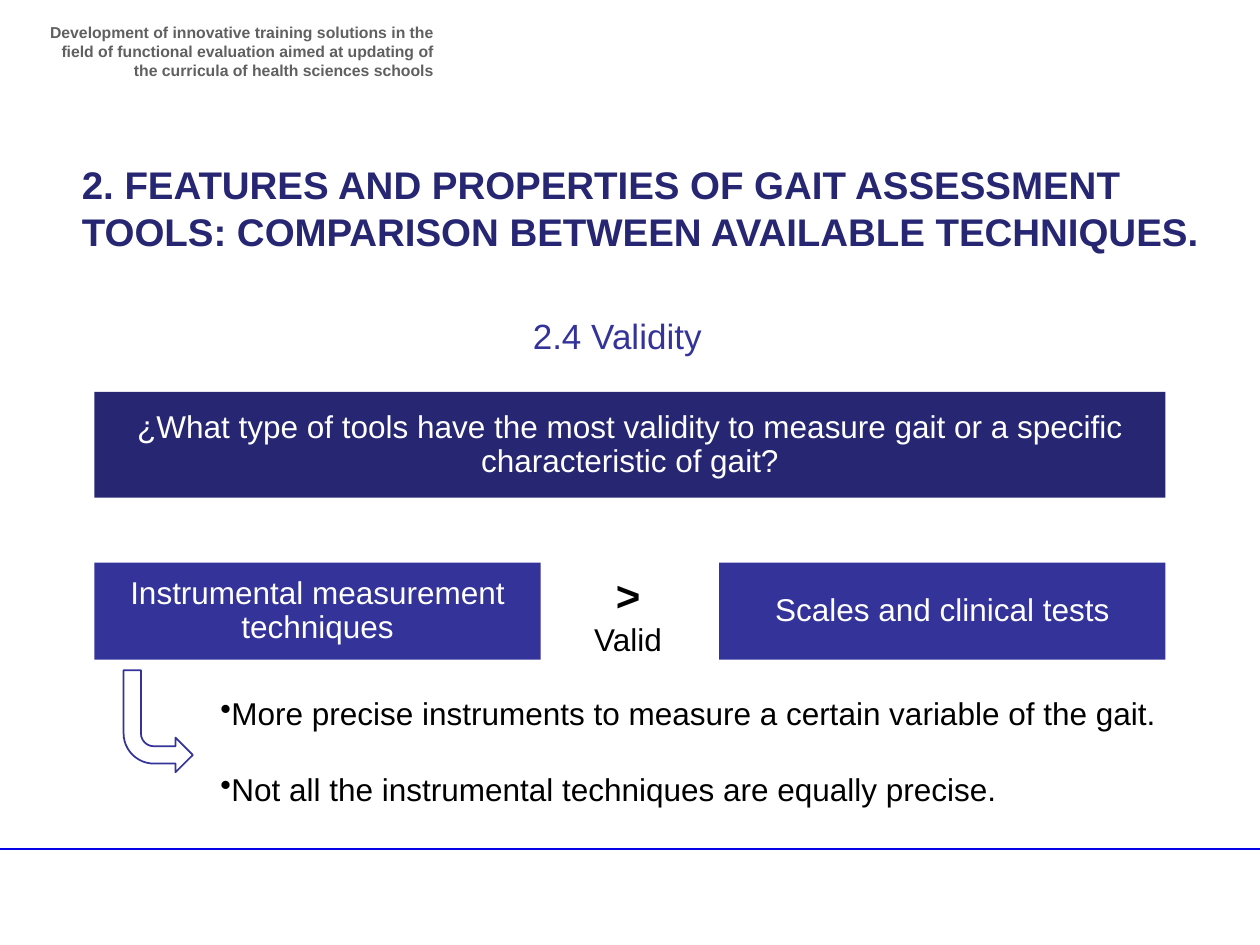
import pptx
import pptx.util
import pptx.dml.color
import pptx.oxml.ns
import pptx.enum.shapes
import pptx.enum.text
from lxml import etree

Pt = pptx.util.Pt
ALIGN = pptx.enum.text.PP_ALIGN
ANCHOR = pptx.enum.text.MSO_ANCHOR
SHAPE = pptx.enum.shapes.MSO_SHAPE

# Content
PROJECT = ("Development of innovative training solutions in the field of functional "
           "evaluation aimed at updating of the curricula of health sciences schools")
TITLE = ("2. FEATURES AND PROPERTIES OF GAIT ASSESSMENT TOOLS: "
         "COMPARISON BETWEEN AVAILABLE TECHNIQUES.")
SECTION = "2.4 Validity"
QUESTION = ("¿What type of tools have the most validity to measure gait "
            "or a specific characteristic of gait?")
COMPARED = ["Instrumental measurement techniques", "Scales and clinical tests"]
RELATION = [">", "Valid"]
REASONS = ["More precise instruments to measure a certain variable of the gait.",
           "Not all the instrumental techniques are equally precise."]

# Look and layout, in points
FONT = "Arial"
NAVY, INDIGO, GREY, BLACK, WHITE, RULE = (
    "262673", "333399", "606060", "000000", "FFFFFF", "0404E6")
SLIDE_W, SLIDE_H = 720, 540
MARGIN = 54
CONTENT_W = SLIDE_W - 2 * MARGIN
TOOL_W, TOOL_H, TOOL_TOP = 255, 55.5, 321.5
BULLET_INDENT = 6.3


def rgb(color):
    return pptx.dml.color.RGBColor.from_string(color)


def place(shape, left, top, width, height):
    shape.left, shape.top, shape.width, shape.height = map(Pt, (left, top, width, height))


def style(paragraph, size, color, bold=False, align=ALIGN.LEFT):
    paragraph.alignment = align
    for run in paragraph.runs:
        run.font.name, run.font.size, run.font.bold = FONT, Pt(size), bold
        run.font.color.rgb = rgb(color)


def add_text(slide, box, lines, size, color, bold=False, align=ALIGN.LEFT):
    frame = slide.shapes.add_textbox(*map(Pt, box)).text_frame
    frame.word_wrap = True
    frame.text = "\n".join(lines)
    for paragraph in frame.paragraphs:
        style(paragraph, size, color, bold, align)
    return frame


def add_panel(slide, box, text, fill):
    panel = slide.shapes.add_shape(SHAPE.RECTANGLE, *map(Pt, box))
    panel.shadow.inherit = False
    panel.fill.solid()
    panel.fill.fore_color.rgb = rgb(fill)
    panel.line.fill.background()
    frame = panel.text_frame
    frame.word_wrap = True
    frame.vertical_anchor = ANCHOR.MIDDLE
    frame.margin_left = frame.margin_right = Pt(0.9)
    frame.margin_top = frame.margin_bottom = Pt(0.9)
    frame.text = text
    frame.paragraphs[0].line_spacing = 0.9
    style(frame.paragraphs[0], 18, WHITE, align=ALIGN.CENTER)


def add_bullet(paragraph):
    properties = paragraph._p.get_or_add_pPr()
    properties.set("marL", str(Pt(BULLET_INDENT)))
    properties.set("indent", str(-Pt(BULLET_INDENT)))
    bullet = etree.SubElement(properties, pptx.oxml.ns.qn("a:buChar"))
    bullet.set("char", "•")


deck = pptx.Presentation()
deck.slide_width, deck.slide_height = Pt(SLIDE_W), Pt(SLIDE_H)
slide = deck.slides.add_slide(deck.slide_layouts[5])

# Footer rule and project header
rule = slide.shapes.add_connector(pptx.enum.shapes.MSO_CONNECTOR.STRAIGHT,
                                  Pt(0), Pt(485.3), Pt(SLIDE_W), Pt(485.3))
rule.line.color.rgb = rgb(RULE)
rule.line.width = Pt(1)
etree.SubElement(rule._element.spPr, pptx.oxml.ns.qn("a:effectLst"))
add_text(slide, (20, 9.4, 234.7, 34), [PROJECT], 9, GREY, True, ALIGN.RIGHT)

# Title and section heading
title = slide.shapes.title
place(title, 39.6, 88.6, 654.5, 60.5)
title.text_frame.text = TITLE
title.text_frame.word_wrap = True
title.text_frame.auto_size = pptx.enum.text.MSO_AUTO_SIZE.NONE
title.text_frame.vertical_anchor = ANCHOR.TOP
style(title.text_frame.paragraphs[0], 22, NAVY, True)
add_text(slide, (297.4, 176.4, 113, 55.4), [SECTION], 20, INDIGO)

# Question, and the two kinds of tool at either margin
add_panel(slide, (MARGIN, 224, CONTENT_W, 60.5), QUESTION, NAVY)
for i, tool in enumerate(COMPARED):
    left = MARGIN + i * (CONTENT_W - TOOL_W)
    add_panel(slide, (left, TOOL_TOP, TOOL_W, TOOL_H), tool, INDIGO)

# Relation between them
relation = add_text(slide, (324.7, 321.8, 68.4, 58.3), RELATION, 18, BLACK, align=ALIGN.CENTER)
style(relation.paragraphs[0], 24, BLACK, True, ALIGN.CENTER)

# Reasons, led in by the bent arrow
reasons = add_text(slide, (118.8, 393.1, 601.2, 72.7), REASONS, 18, BLACK)
for paragraph in reasons.paragraphs:
    add_bullet(paragraph)
reasons.paragraphs[1].space_before = Pt(22)

arrow = slide.shapes.add_shape(SHAPE.BENT_ARROW, Pt(70.6), Pt(383), Pt(39.6), Pt(58.3))
arrow.shadow.inherit = False
arrow.fill.background()
arrow.line.color.rgb = rgb(INDIGO)
arrow.line.width = Pt(1)
arrow._element.spPr.xfrm.set("flipV", "1")

deck.save("out.pptx")
